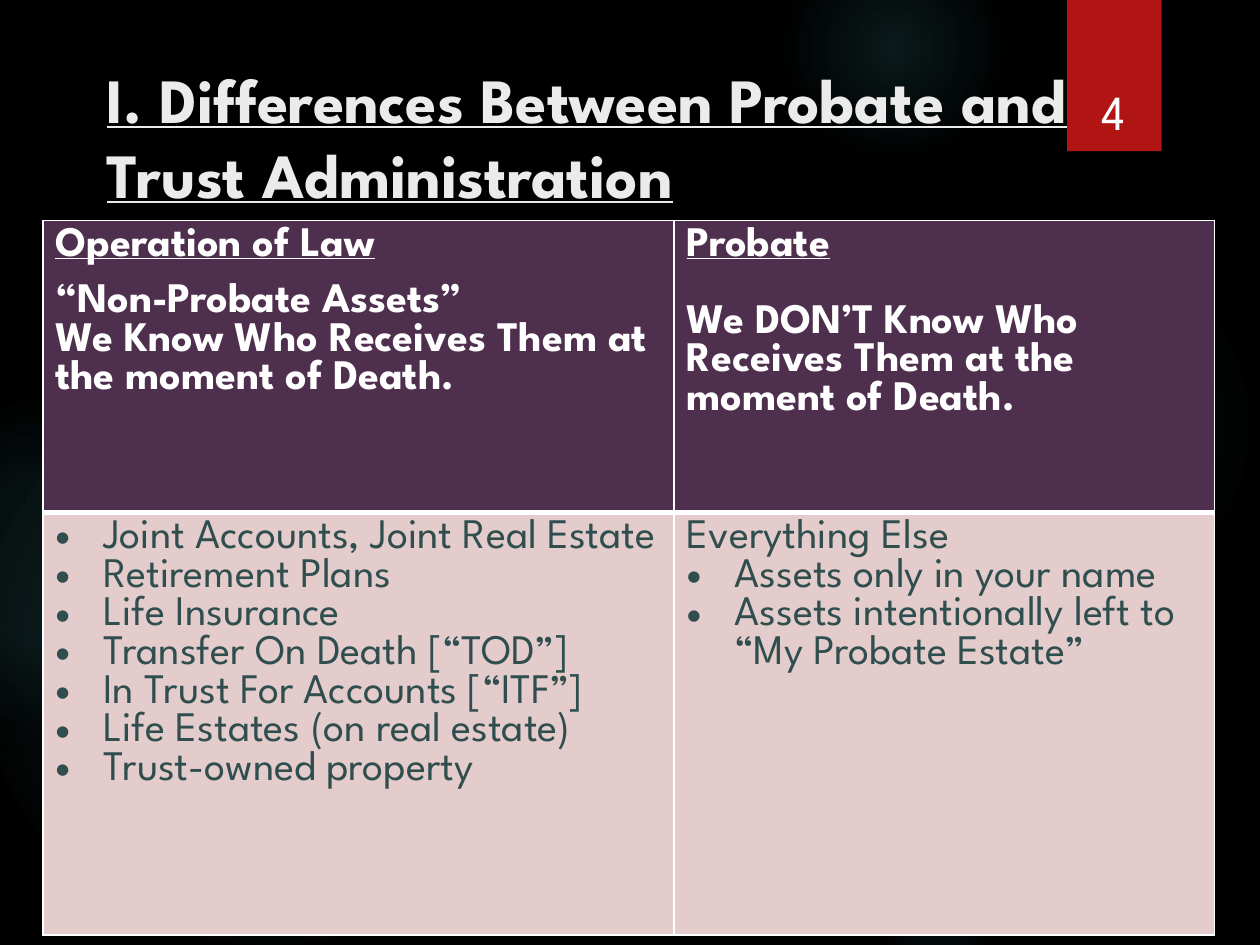
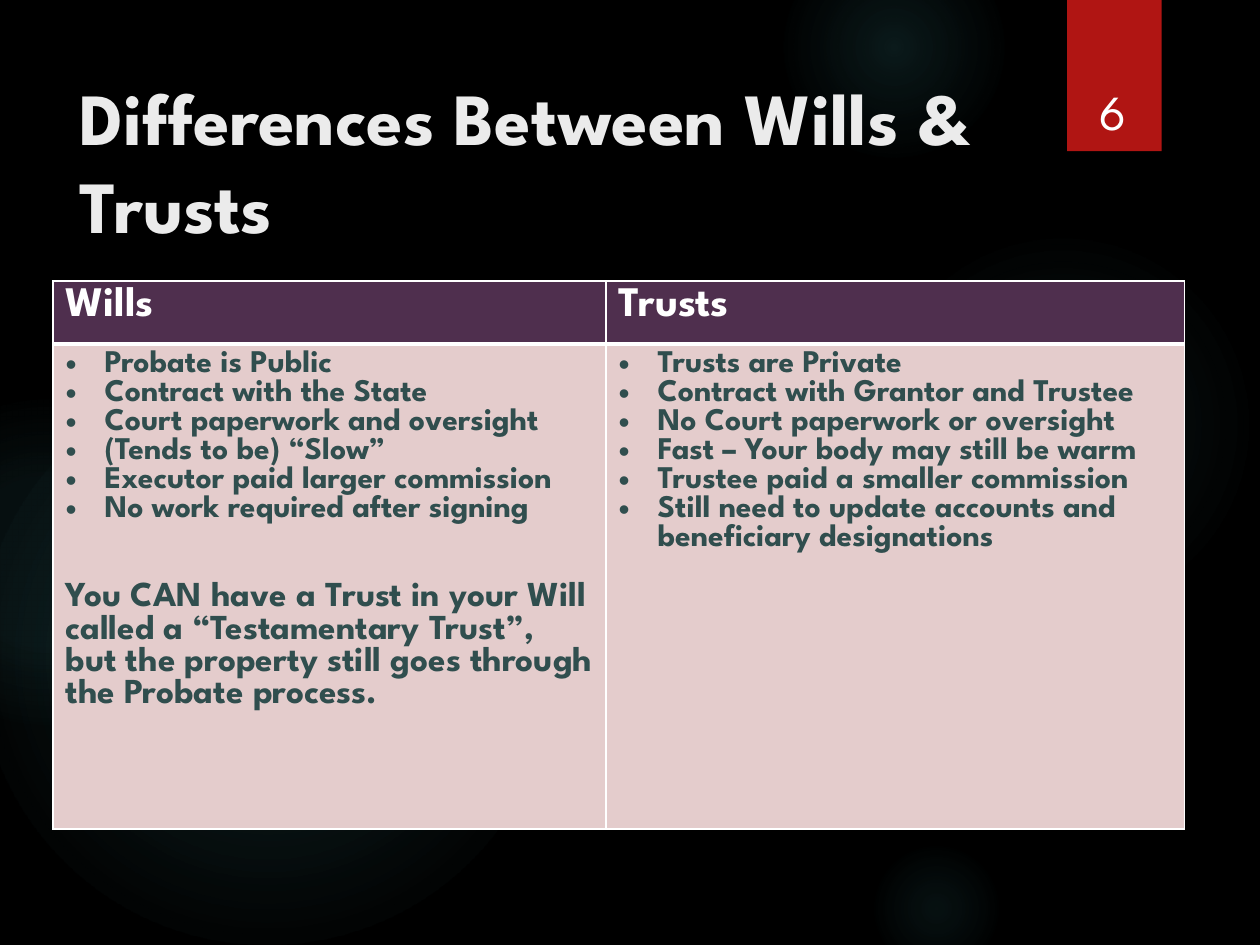
from lxml.etree import SubElement
from pptx import Presentation
from pptx.dml.color import RGBColor
from pptx.enum.shapes import MSO_SHAPE as Shape
from pptx.enum.text import MSO_ANCHOR as Anchor, PP_ALIGN as Align
from pptx.oxml.ns import qn
from pptx.util import Inches, Pt

FONT = "League Spartan"
COLORS = {
    "background": "000000", "glow": "50B9C1", "ribbon": "B01513",
    "title": "EBEBEB", "white": "FFFFFF", "header": "4F2F4E",
    "body": "E4CCCC", "text": "304E4E",
}
GLOWS = [
    (6.89, 1.83, 3.08, [(0, 7), (36, 6), (69, 0)]),
    (6.22, -0.5, 1.75, [(0, 14), (36, 7), (73, 0)]),
    (6.89, 6.67, 1.08, [(0, 9), (36, 5), (66, 0)]),
    (-0.17, 2.92, 4.58, [(0, 11), (36, 10), (75, 0)]),
    (-0.92, 3.17, 2.58, [(0, 8), (36, 8), (72, 0)]),
]
RIBBON = (8.47, 0, 0.75, 1.2)
NUMBER_BOX = (8.49, 0.32, 0.69, 0.84)
TITLE_LEADING = 1.195

SLIDES = [
    {
        "number": "4",
        "title": "I. Differences Between Probate and Trust Administration",
        "title_box": (0.75, 0.4, 8.49, 1.06), "title_size": 36, "underline": True,
        "origin": (0.34, 1.75), "columns": (5.01, 4.29), "rows": (2.32, 3.35),
        "body_size": 24, "body_bold": False, "indent": 0.38,
        "header": [
            [("Operation of Law", {"underline": True}),
             ("“Non-Probate Assets”", {"before": 10}),
             ("We Know Who Receives Them at the moment of Death.", {})],
            [("Probate", {"underline": True}),
             ("We DON’T Know Who Receives Them at the moment of Death.", {"before": 22})],
        ],
        "body": [
            ["Joint Accounts, Joint Real Estate", "Retirement Plans", "Life Insurance",
             "Transfer On Death [“TOD”]", "In Trust For Accounts [“ITF”]",
             "Life Estates (on real estate)", "Trust-owned property"],
            [("Everything Else", {}), "Assets only in your name",
             "Assets intentionally left to “My Probate Estate”"],
        ],
    },
    {
        "number": "6",
        "title": "Differences Between Wills & Trusts",
        "title_box": (0.53, 0.5, 7.72, 1.53), "title_size": 42, "underline": False,
        "origin": (0.42, 2.23), "columns": (4.39, 4.59), "rows": (0.5, 3.85),
        "body_size": 18, "body_bold": True, "indent": 0.31,
        "header": [[("Wills", {})], [("Trusts", {})]],
        "body": [
            ["Probate is Public", "Contract with the State",
             "Court paperwork and oversight", "(Tends to be) “Slow”",
             "Executor paid larger commission", "No work required after signing",
             ("You CAN have a Trust in your Will called a “Testamentary Trust”, "
              "but the property still goes through the Probate process.",
              {"before": 33, "size": 20})],
            ["Trusts are Private", "Contract with Grantor and Trustee",
             "No Court paperwork or oversight", "Fast – Your body may still be warm",
             "Trustee paid a smaller commission",
             "Still need to update accounts and beneficiary designations"],
        ],
    },
]


def color(name):
    return RGBColor.from_string(COLORS[name])


def inches(values):
    return [Inches(value) for value in values]


def style(paragraph, size, color_name, bold=False, underline=False):
    font = paragraph.font
    font.name, font.size, font.bold, font.underline = FONT, Pt(size), bold, underline
    font.color.rgb = color(color_name)


def add_plain_shape(slide, kind, box, color_name):
    shape = slide.shapes.add_shape(kind, *inches(box))
    shape.shadow.inherit = False
    shape.line.fill.background()
    shape.fill.solid()
    shape.fill.fore_color.rgb = color(color_name)
    return shape


def add_glow(slide, left, top, diameter, stops):
    shape = add_plain_shape(slide, Shape.OVAL, (left, top, diameter, diameter), "glow")
    solid = shape.fill._xPr.find(qn("a:solidFill"))
    gradient = solid.makeelement(qn("a:gradFill"), {"rotWithShape": "1"})
    stop_list = SubElement(gradient, qn("a:gsLst"))
    for position, opacity in stops:
        stop = SubElement(stop_list, qn("a:gs"), pos=str(position * 1000))
        tint = SubElement(stop, qn("a:srgbClr"), val=COLORS["glow"])
        SubElement(tint, qn("a:alpha"), val=str(opacity * 1000))
    circle = SubElement(gradient, qn("a:path"), {"path": "circle"})
    SubElement(circle, qn("a:fillToRect"), dict.fromkeys("ltrb", "50000"))
    solid.getparent().replace(solid, gradient)


def add_text(slide, box, text, **font):
    frame = slide.shapes.add_textbox(*inches(box)).text_frame
    frame.word_wrap = True
    paragraph = frame.paragraphs[0]
    paragraph.text = text
    style(paragraph, **font)
    return frame, paragraph


def add_bullet(paragraph, indent):
    properties = paragraph._p.get_or_add_pPr()
    properties.set("marL", str(Inches(indent)))
    properties.set("indent", str(-Inches(indent)))
    SubElement(properties, qn("a:buFont"), typeface="Arial")
    SubElement(properties, qn("a:buChar"), char="•")


def add_borders(cell, widths):
    properties = cell._tc.get_or_add_tcPr()
    for index, (side, width) in enumerate(widths.items()):
        line = properties.makeelement(qn(f"a:ln{side}"), {"w": str(Pt(width))})
        fill = SubElement(line, qn("a:solidFill"))
        SubElement(fill, qn("a:srgbClr"), val=COLORS["white"])
        properties.insert(index, line)


def fill_cell(cell, items, fill, borders, indent, **font):
    cell.fill.solid()
    cell.fill.fore_color.rgb = color(fill)
    add_borders(cell, borders)
    frame = cell.text_frame
    for index, item in enumerate(items):
        bulleted = isinstance(item, str)
        text, changes = (item, {}) if bulleted else item
        paragraph = frame.add_paragraph() if index else frame.paragraphs[0]
        paragraph.text = text
        changes = dict(changes)
        paragraph.space_before = Pt(changes.pop("before", 0))
        style(paragraph, **{**font, **changes})
        if bulleted:
            add_bullet(paragraph, indent)


def add_comparison(slide, content):
    columns, rows = content["columns"], content["rows"]
    box = (*content["origin"], sum(columns), sum(rows))
    table = slide.shapes.add_table(len(rows), len(columns), *inches(box)).table
    table.first_row = table.horz_banding = False
    for column, width in zip(table.columns, columns):
        column.width = Inches(width)
    for row, height in zip(table.rows, rows):
        row.height = Inches(height)
    for index, (header, body) in enumerate(zip(content["header"], content["body"])):
        fill_cell(table.cell(0, index), header, "header", {"L": 1, "R": 1, "T": 1, "B": 3},
                  content["indent"], size=24, color_name="white", bold=True)
        fill_cell(table.cell(1, index), body, "body", {"L": 1, "R": 1, "T": 3, "B": 1},
                  content["indent"], size=content["body_size"], color_name="text",
                  bold=content["body_bold"])


def add_slide(presentation, content):
    slide = presentation.slides.add_slide(presentation.slide_layouts[6])
    slide.background.fill.solid()
    slide.background.fill.fore_color.rgb = color("background")
    for glow in GLOWS:
        add_glow(slide, *glow)
    add_plain_shape(slide, Shape.RECTANGLE, RIBBON, "ribbon")
    size = content["title_size"]
    frame, title = add_text(slide, content["title_box"], content["title"], size=size,
                            color_name="title", bold=True, underline=content["underline"])
    frame.margin_top = Inches(0.08)
    title.line_spacing = Pt(round(size * TITLE_LEADING))
    add_comparison(slide, content)
    frame, number = add_text(slide, NUMBER_BOX, content["number"], size=28, color_name="white")
    frame.vertical_anchor = Anchor.BOTTOM
    number.alignment = Align.CENTER


def main():
    """Build the two comparison slides."""
    presentation = Presentation()
    presentation.slide_width, presentation.slide_height = Inches(10), Inches(7.5)
    for content in SLIDES:
        add_slide(presentation, content)
    presentation.save("out.pptx")


if __name__ == "__main__":
    main()
